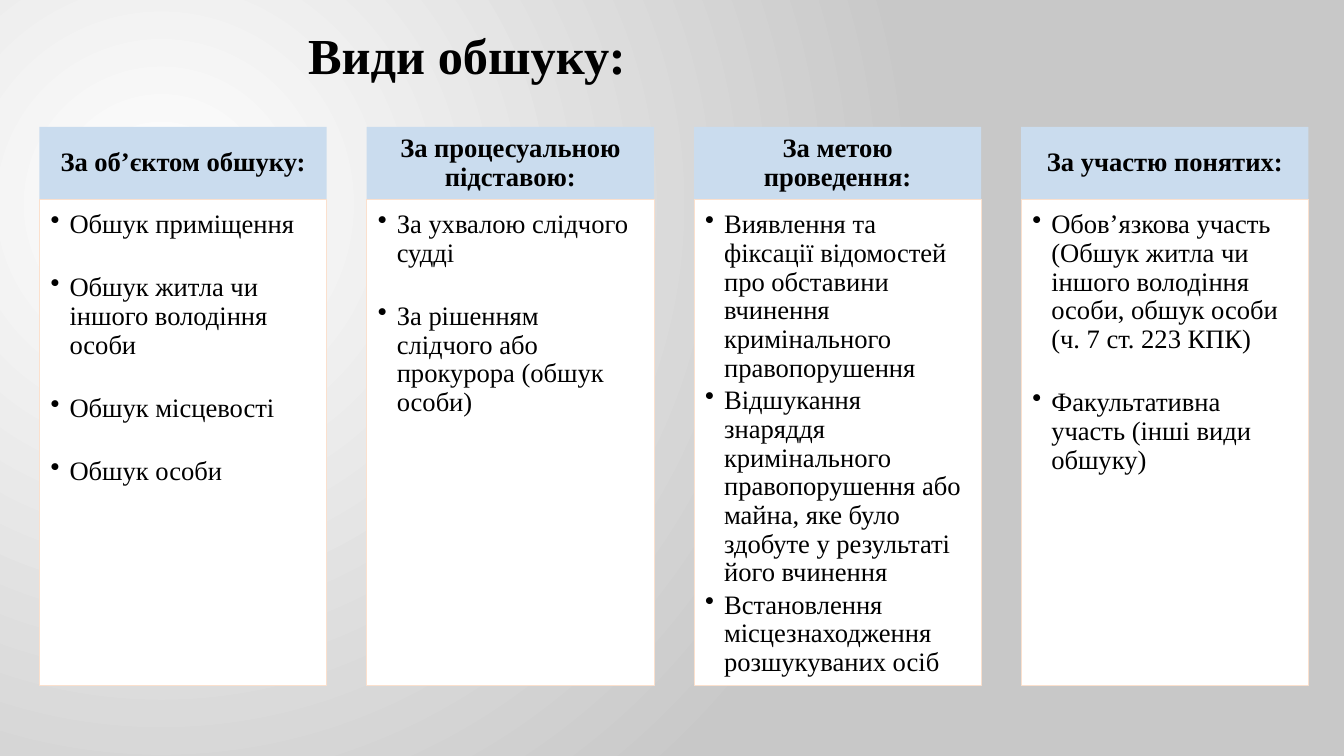
from lxml.etree import SubElement
from pptx import Presentation
from pptx.dml.color import RGBColor
from pptx.enum.shapes import MSO_SHAPE
from pptx.enum.text import MSO_ANCHOR, PP_ALIGN
from pptx.oxml.ns import qn
from pptx.util import Pt

BLACK = RGBColor(0x00, 0x00, 0x00)
WHITE = RGBColor(0xFF, 0xFF, 0xFF)
GREY = RGBColor(0xC8, 0xC8, 0xC8)
BLUE = RGBColor(0xCA, 0xDC, 0xEE)
PEACH = RGBColor(0xFB, 0xE0, 0xCD)

LEFT, PITCH, WIDTH = 28.2, 233.76, 205.2
HEAD_TOP, HEAD_HEIGHT = 90.7, 51.8
BODY_TOP, BODY_HEIGHT = HEAD_TOP + HEAD_HEIGHT, 347
INDENT = 13.5
WIDE_GAP, NARROW_GAP = 24.5, 2.5

TITLE_FONT = {"name": "Times New Roman", "size": Pt(36), "bold": True}
HEAD_FONT = {"name": "Times New Roman", "size": Pt(19), "bold": True}
BODY_FONT = {"name": "Times New Roman", "size": Pt(19), "bold": False}

HEAD_FRAME = {"word_wrap": True, "vertical_anchor": MSO_ANCHOR.MIDDLE,
              "margin_left": Pt(10.8), "margin_right": Pt(10.8),
              "margin_top": Pt(6), "margin_bottom": Pt(6)}
BODY_FRAME = {"word_wrap": True, "vertical_anchor": MSO_ANCHOR.TOP,
              "margin_left": Pt(8), "margin_right": Pt(10.8),
              "margin_top": Pt(8), "margin_bottom": Pt(12)}

COLUMNS = [
    ("За об’єктом обшуку:", WIDE_GAP, [
        "Обшук приміщення",
        "Обшук житла чи іншого володіння особи",
        "Обшук місцевості",
        "Обшук особи"]),
    ("За процесуальною підставою:", WIDE_GAP, [
        "За ухвалою слідчого судді",
        "За рішенням слідчого або прокурора (обшук особи)"]),
    ("За метою проведення:", NARROW_GAP, [
        "Виявлення та фіксації відомостей про обставини вчинення "
        "кримінального правопорушення",
        "Відшукання знаряддя кримінального правопорушення або майна, "
        "яке було здобуте у результаті його вчинення",
        "Встановлення місцезнаходження розшукуваних осіб"]),
    ("За участю понятих:", WIDE_GAP, [
        "Обов’язкова участь (Обшук житла чи іншого володіння особи, "
        "обшук особи (ч. 7 ст. 223 КПК)",
        "Факультативна участь (інші види обшуку)"]),
]


def apply(target, values):
    for name, value in values.items():
        setattr(target, name, value)


def set_background(s):
    """Fill the slide with a circular gradient centred at the upper left."""
    fill = s.background.fill
    fill.gradient()
    for stop, color in zip(fill.gradient_stops, (WHITE, GREY)):
        stop.color.rgb = color
    grad = s.element.find(".//" + qn("a:gradFill"))
    grad.remove(grad.find(qn("a:lin")))
    circle = SubElement(grad, qn("a:path"), path="circle")
    SubElement(circle, qn("a:fillToRect"), l="50000", t="55000", r="125000", b="100000")


def add_run(p, text, font):
    r = p.add_run()
    r.text = text
    apply(r.font, font)
    r.font.color.rgb = BLACK


def add_bullet(p):
    pPr = p._p.get_or_add_pPr()
    pPr.set("marL", str(Pt(INDENT)))
    pPr.set("indent", str(-Pt(INDENT)))
    SubElement(pPr, qn("a:buChar"), char="•")


def add_title(s, text):
    tf = s.shapes.add_textbox(Pt(213), Pt(18.7), Pt(535.7), Pt(72)).text_frame
    tf.word_wrap = True
    p = tf.paragraphs[0]
    apply(p, {"space_before": Pt(10), "line_spacing": 0.9})
    add_run(p, text, TITLE_FONT)


def add_box(s, left, top, height, color, frame):
    sp = s.shapes.add_shape(MSO_SHAPE.RECTANGLE, Pt(left), Pt(top), Pt(WIDTH), Pt(height))
    sp.shadow.inherit = False
    sp.fill.solid()
    sp.fill.fore_color.rgb = color
    sp.line.fill.background()
    apply(sp.text_frame, frame)
    return sp


def add_heading(s, left, text):
    sp = add_box(s, left, HEAD_TOP, HEAD_HEIGHT, BLUE, HEAD_FRAME)
    p = sp.text_frame.paragraphs[0]
    apply(p, {"alignment": PP_ALIGN.CENTER, "line_spacing": 0.9})
    add_run(p, text, HEAD_FONT)


def add_list(s, left, items, gap):
    sp = add_box(s, left, BODY_TOP, BODY_HEIGHT, WHITE, BODY_FRAME)
    sp.line.color.rgb = PEACH
    sp.line.width = Pt(0.5)
    tf = sp.text_frame
    for i, item in enumerate(items):
        p = tf.add_paragraph() if i else tf.paragraphs[0]
        apply(p, {"alignment": PP_ALIGN.LEFT, "line_spacing": 0.9, "space_after": Pt(gap)})
        add_bullet(p)
        add_run(p, item, BODY_FONT)


def main():
    prs = Presentation()
    prs.slide_width, prs.slide_height = Pt(960), Pt(540)
    s = prs.slides.add_slide(prs.slide_layouts[6])
    set_background(s)
    add_title(s, "Види обшуку:")
    for i, (heading, gap, items) in enumerate(COLUMNS):
        left = LEFT + i * PITCH
        add_heading(s, left, heading)
        add_list(s, left, items, gap)
    prs.save("out.pptx")


if __name__ == "__main__":
    main()
